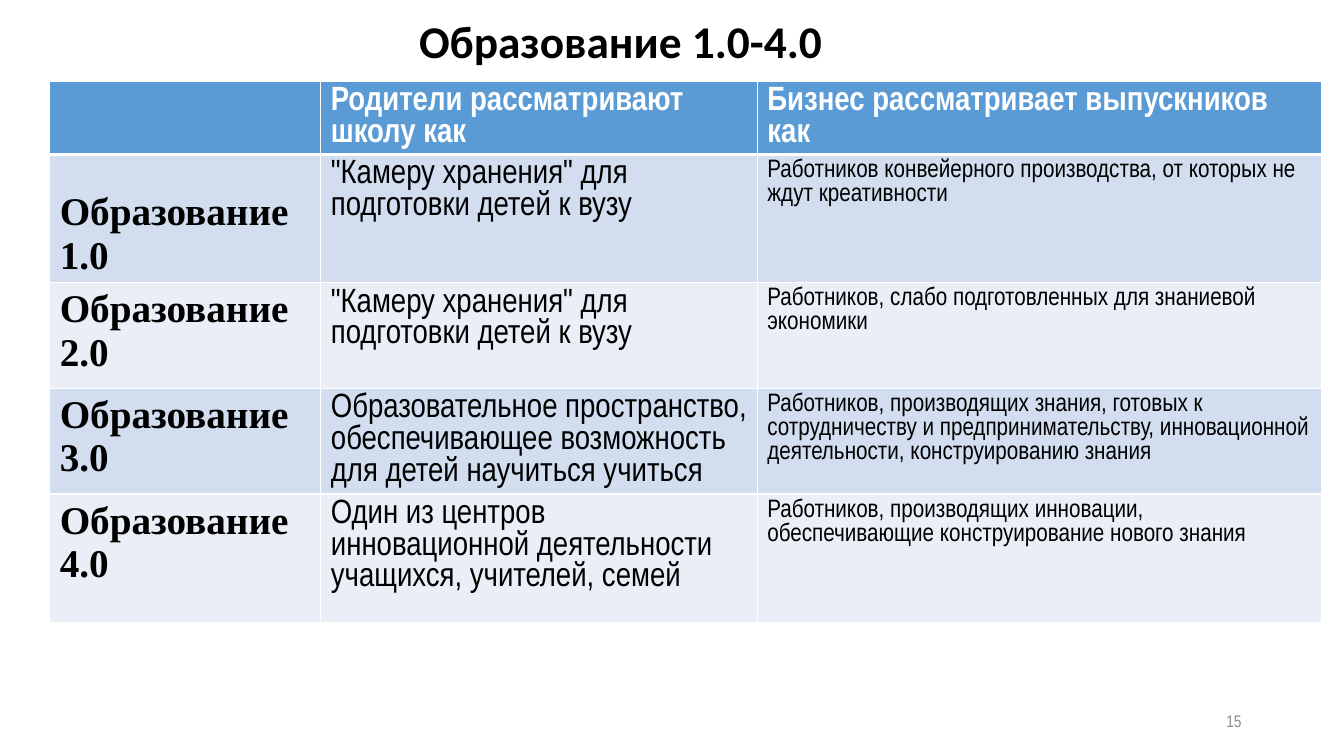
from lxml import etree
from pptx import Presentation
from pptx.dml.color import RGBColor
from pptx.enum.text import MSO_ANCHOR, PP_ALIGN
from pptx.oxml.ns import qn
from pptx.util import Pt

BOTTOM, MIDDLE = MSO_ANCHOR.BOTTOM, MSO_ANCHOR.MIDDLE
CENTER, RIGHT = PP_ALIGN.CENTER, PP_ALIGN.RIGHT

COLORS = {
    "header": "5B9BD5",
    "odd": "D2DEEF",
    "even": "EAEFF7",
    "white": "FFFFFF",
    "black": "000000",
    "number": "8C8C8C",
}
NARROW = "Arial Narrow"
FORMATS = {
    "title": {"name": "Calibri", "size": Pt(32.4), "bold": True},
    "header": {"name": NARROW, "size": Pt(24), "bold": True},
    "stage": {"name": "Times New Roman", "size": Pt(28), "bold": True},
    "parents": {"name": NARROW, "size": Pt(24), "bold": False},
    "business": {"name": NARROW, "size": Pt(18), "bold": False},
    "number": {"name": NARROW, "size": Pt(12), "bold": False},
}
COLUMNS = {"stage": 193.7, "parents": 311.8, "business": 403.2}
ROW_HEIGHTS = [52.5, 91, 75.5, 75.5, 92]
ROWS = [
    ["", "Родители рассматривают школу как", "Бизнес рассматривает выпускников как"],
    ["Образование 1.0", "\"Камеру хранения\" для подготовки детей к вузу",
     "Работников конвейерного производства, от которых не ждут креативности"],
    ["Образование 2.0", "\"Камеру хранения\" для подготовки детей к вузу",
     "Работников, слабо подготовленных для знаниевой экономики"],
    ["Образование 3.0",
     "Образовательное пространство, обеспечивающее возможность для детей научиться учиться",
     "Работников, производящих знания, готовых к сотрудничеству и предпринимательству, "
     "инновационной деятельности, конструированию знания"],
    ["Образование 4.0",
     "Один из центров инновационной деятельности учащихся, учителей, семей",
     "Работников, производящих инновации, обеспечивающие конструирование нового знания"],
]


def write(tf, text, style, color, align=None):
    """Fill a text frame with one formatted paragraph."""
    tf.word_wrap = True
    p = tf.paragraphs[0]
    p.alignment = align
    r = p.add_run()
    r.text = text
    for key, value in FORMATS[style].items():
        setattr(r.font, key, value)
    r.font.color.rgb = RGBColor.from_string(COLORS[color])
    return p


def add_borders(cell, widths):
    """Draw white borders on the left, right, top and bottom of a cell."""
    tcPr = cell._tc.get_or_add_tcPr()
    for i, (side, width) in enumerate(zip("LRTB", widths)):
        ln = etree.Element(qn(f"a:ln{side}"), w=str(Pt(width)))
        fill = etree.SubElement(ln, qn("a:solidFill"))
        etree.SubElement(fill, qn("a:srgbClr"), val=COLORS["white"])
        tcPr.insert(i, ln)


def add_title(s, text):
    """Place the slide title."""
    sp = s.shapes.title
    sp.left, sp.top, sp.width, sp.height = Pt(33), Pt(0), Pt(828), Pt(52.5)
    tf = sp.text_frame
    tf.vertical_anchor = BOTTOM
    write(tf, text, "title", "black", CENTER).line_spacing = 0.9


def add_stage_table(s):
    """Add the table of education stages."""
    table = s.shapes.add_table(
        len(ROWS), len(COLUMNS), Pt(35.5), Pt(57.8),
        Pt(sum(COLUMNS.values())), Pt(sum(ROW_HEIGHTS))).table
    for column, width in zip(table.columns, COLUMNS.values()):
        column.width = Pt(width)
    for i, (row, height) in enumerate(zip(ROWS, ROW_HEIGHTS)):
        table.rows[i].height = Pt(height)
        band = "header" if i == 0 else "odd" if i % 2 else "even"
        for j, (style, text) in enumerate(zip(COLUMNS, row)):
            cell = table.cell(i, j)
            cell.fill.solid()
            cell.fill.fore_color.rgb = RGBColor.from_string(COLORS[band])
            add_borders(cell, [1, 1, 3 if i == 1 else 1, 3 if i == 0 else 1])
            if text:
                write(cell.text_frame, text, style if i else "header",
                      "black" if i else "white")
    table.cell(1, 0).margin_top = Pt(26)


def add_number(s, text):
    """Add the slide number."""
    tf = s.shapes.add_textbox(Pt(678), Pt(500.5), Pt(216), Pt(28.8)).text_frame
    tf.vertical_anchor = MIDDLE
    write(tf, text, "number", "number", RIGHT)


def main():
    """Build and save the slide."""
    prs = Presentation()
    prs.slide_width, prs.slide_height = Pt(960), Pt(540)
    s = prs.slides.add_slide(prs.slide_layouts[5])
    add_title(s, "Образование 1.0-4.0 ")
    add_stage_table(s)
    add_number(s, "15")
    prs.save("out.pptx")


if __name__ == "__main__":
    main()
